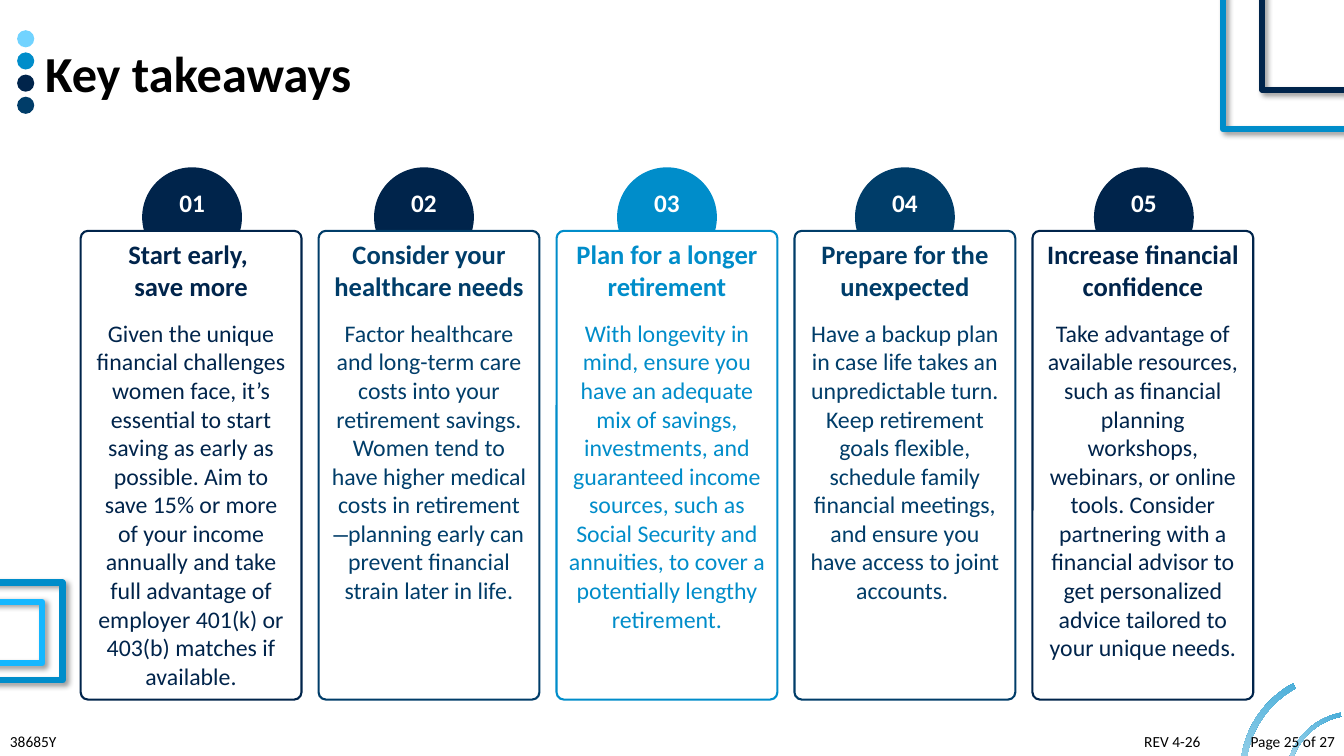
from dataclasses import dataclass

from lxml import etree
from pptx import Presentation
from pptx.dml.color import RGBColor
from pptx.enum.shapes import MSO_SHAPE
from pptx.enum.text import MSO_ANCHOR, MSO_AUTO_SIZE, PP_ALIGN
from pptx.oxml.ns import qn
from pptx.util import Inches, Pt

RECT, ROUNDED = MSO_SHAPE.RECTANGLE, MSO_SHAPE.ROUNDED_RECTANGLE
OVAL, ARC = MSO_SHAPE.OVAL, MSO_SHAPE.BLOCK_ARC
LEFT, CENTER, RIGHT = PP_ALIGN.LEFT, PP_ALIGN.CENTER, PP_ALIGN.RIGHT
TOP, GROW = MSO_ANCHOR.TOP, MSO_AUTO_SIZE.SHAPE_TO_FIT_TEXT


@dataclass(frozen=True)
class Theme:
    """Colours, fonts and type sizes of the slide."""
    navy: str = "00244B"
    deep: str = "003D69"
    blue: str = "008DCA"
    bright: str = "15B7FF"
    sky: str = "71D3FF"
    white: str = "FFFFFF"
    black: str = "000000"
    font: str = "Calibri"
    dash_font: str = "Courier New"
    title: int = 36
    heading: int = 19
    badge: int = 18
    body: int = 17
    footer: int = 11


THEME = Theme()

CARDS = [
    (THEME.navy, THEME.navy, 0.61, "Start early, \nsave more",
     "Given the unique financial challenges women face, it’s essential to start saving "
     "as early as possible. Aim to save 15% or more of your income annually and take full "
     "advantage of employer 401(k) or 403(b) matches if available."),
    (THEME.navy, THEME.deep, 0.55, "Consider your healthcare needs",
     "Factor healthcare and long-term care costs into your retirement savings. Women tend "
     "to have higher medical costs in retirement —planning early can prevent financial "
     "strain later in life."),
    (THEME.blue, THEME.blue, 0.6, "Plan for a longer retirement",
     "With longevity in mind, ensure you have an adequate mix of savings, investments, and "
     "guaranteed income sources, such as Social Security and annuities, to cover a "
     "potentially lengthy retirement."),
    (THEME.deep, THEME.deep, 0.6, "Prepare for the unexpected",
     "Have a backup plan in case life takes an unpredictable turn. Keep retirement goals "
     "flexible, schedule family financial meetings, and ensure you have access to joint "
     "accounts. "),
    (THEME.navy, THEME.navy, 0.61, "Increase financial confidence",
     "Take advantage of available resources, such as financial planning workshops, "
     "webinars, or online tools. Consider partnering with a financial advisor to get "
     "personalized advice tailored to your unique needs."),
]
CARD_LEFT, CARD_PITCH = 0.8, 2.36

FRAMES = [
    ((-0.12, 5.78, 0.74, 0.97), THEME.blue),
    ((-0.15, 5.97, 0.57, 0.61), THEME.bright),
    ((12.52, -0.4, 1.47, 1.29), THEME.navy),
    ((12.13, -0.11, 1.42, 1.39), THEME.blue),
]
RINGS = [((12.3, 6.66, 2, 2), 68.6), ((12.75, 7.06, 1.35, 1.35), 85.9)]
FOOTERS = [
    ((11.25, 7.21, 2.09, 0.29), "REV 4-26", LEFT),
    ((0, 7.21, 1.89, 0.29), "38685Y", LEFT),
    ((12.27, 7.21, 1.07, 0.29), "Page 25 of 27", RIGHT),
]


def write(p, text, size, color, bold=False, align=LEFT, before=0, after=0):
    """Fill a paragraph with formatted text, breaking lines at newlines."""
    p.alignment = align
    p.space_before, p.space_after = Pt(before), Pt(after)
    for i, line in enumerate(text.split("\n")):
        if i:
            p.add_line_break()
        for piece in filter(None, line.partition("—")):
            r = p.add_run()
            r.text = piece
            r.font.name = THEME.dash_font if piece == "—" else THEME.font
            r.font.size, r.font.bold = Pt(size), bold
            r.font.color.rgb = RGBColor.from_string(color)


class Deck:
    """Draws the elements of one slide in the theme's style."""

    def __init__(self, slide, theme):
        """Keep the slide and its theme."""
        self.s, self.theme = slide, theme

    def shape(self, kind, box, fill=None, line=None, weight=1.5):
        """Add a preset shape without a shadow."""
        sp = self.s.shapes.add_shape(kind, *map(Inches, box))
        sp.shadow.inherit = False
        if fill:
            sp.fill.solid()
            sp.fill.fore_color.rgb = RGBColor.from_string(fill)
        else:
            sp.fill.background()
        if line:
            sp.line.color.rgb = RGBColor.from_string(line)
            sp.line.width = Pt(weight)
        else:
            sp.line.fill.background()
        sp.text_frame.vertical_anchor = TOP
        return sp

    def label(self, box, text, size, **fmt):
        """Add a text box holding one paragraph."""
        tf = self.s.shapes.add_textbox(*map(Inches, box)).text_frame
        tf.word_wrap, tf.auto_size = True, GROW
        write(tf.paragraphs[0], text, size, self.theme.black, **fmt)

    def card(self, number, left, badge_color, color, offset, heading, body):
        """Add a numbered badge tucked behind its takeaway card."""
        t = self.theme
        sp = self.shape(OVAL, (left + offset, 1.66, 0.99, 0.99), badge_color)
        write(sp.text_frame.paragraphs[0], f"{number:02}", t.badge, t.white,
              bold=True, align=CENTER)
        sp = self.shape(ROUNDED, (left, 2.29, 2.19, 4.65), t.white, color)
        sp.adjustments[0] = 0.033
        tf = sp.text_frame
        tf.word_wrap = True
        write(tf.paragraphs[0], heading, t.heading, color, bold=True, align=CENTER, after=6)
        write(tf.add_paragraph(), body, t.body, color, align=CENTER, before=6, after=6)

    def frame(self, box, color):
        """Add an outlined rectangle with a soft shadow."""
        sp = self.shape(RECT, box, line=color, weight=4.5)
        effects = sp._element.spPr.find(qn("a:effectLst"))
        shadow = etree.SubElement(effects, qn("a:outerShdw"), blurRad=str(Pt(4)),
                                  dist=str(Pt(3)), dir="2700000", algn="tl", rotWithShape="0")
        tint = etree.SubElement(shadow, qn("a:srgbClr"), val=self.theme.black)
        etree.SubElement(tint, qn("a:alpha"), val="40000")

    def ring(self, box, rotation):
        """Add a thin open ring that fades from blue to white."""
        sp = self.shape(ARC, box)
        sp.rotation = rotation
        for i, value in enumerate((212.7 * 0.6, 172.9 * 0.6, 0.028)):
            sp.adjustments[i] = value
        sp.fill.gradient()
        sp.fill.gradient_angle = 315
        stops = ((0.01, self.theme.blue), (1, self.theme.white))
        for stop, (position, color) in zip(sp.fill.gradient_stops, stops):
            stop.position = position
            stop.color.rgb = RGBColor.from_string(color)


def main():
    """Build and save the slide."""
    prs = Presentation()
    prs.slide_width, prs.slide_height = Inches(13.33), Inches(7.5)
    deck = Deck(prs.slides.add_slide(prs.slide_layouts[6]), THEME)
    for i, card in enumerate(CARDS):
        deck.card(i + 1, CARD_LEFT + i * CARD_PITCH, *card)
    for box, color in FRAMES:
        deck.frame(box, color)
    for box, rotation in RINGS:
        deck.ring(box, rotation)
    deck.label((0.35, 0.37, 9.62, 0.71), "Key takeaways", THEME.title, bold=True)
    for box, text, align in FOOTERS:
        deck.label(box, text, THEME.footer, align=align)
    for i, color in enumerate((THEME.sky, THEME.blue, THEME.navy, THEME.deep)):
        deck.shape(OVAL, (0.17, 0.3 + i * 0.22, 0.17, 0.17), color)
    prs.save("out.pptx")


if __name__ == "__main__":
    main()
